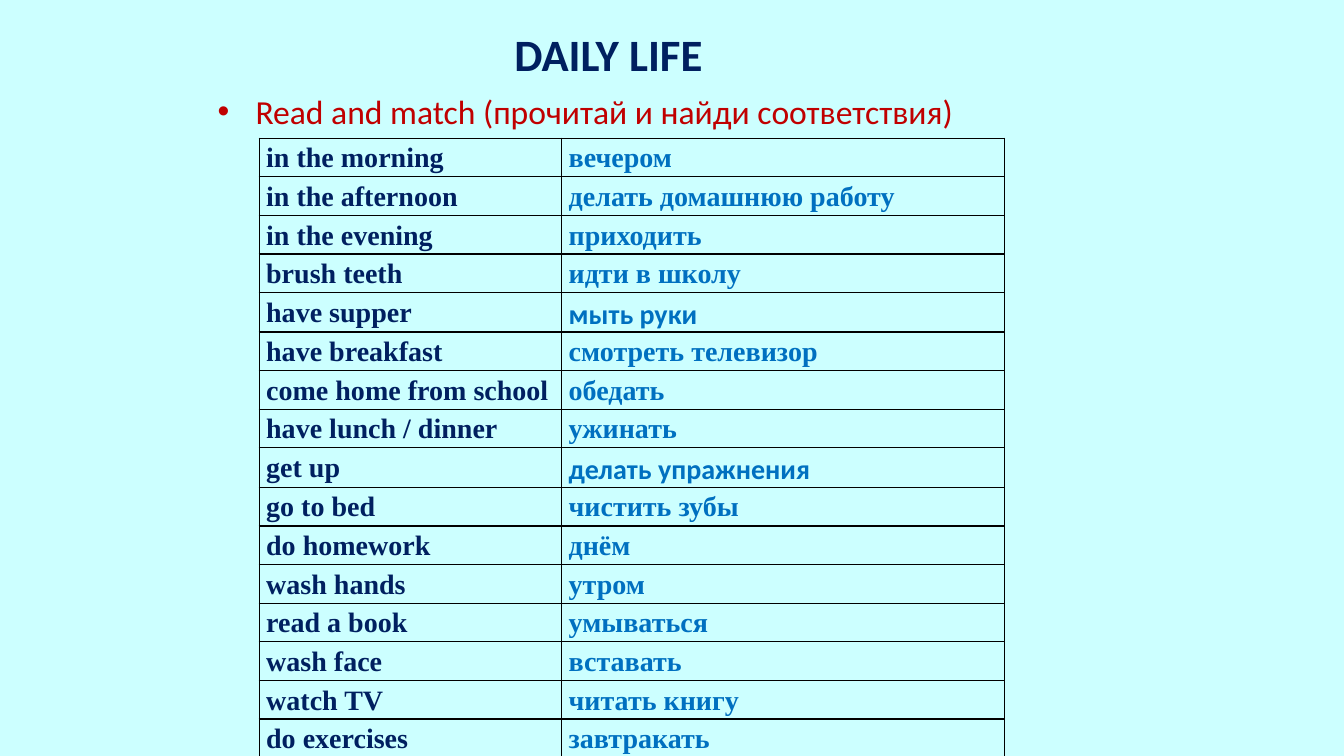
from lxml import etree
from pptx import Presentation
from pptx.dml.color import RGBColor
from pptx.enum.text import MSO_ANCHOR, PP_ALIGN
from pptx.oxml.ns import qn
from pptx.util import Inches, Pt

MIDDLE = MSO_ANCHOR.MIDDLE
TOP = MSO_ANCHOR.TOP
CENTER = PP_ALIGN.CENTER
LEFT = PP_ALIGN.LEFT

HUES = {
    "back": "CCFFFF",
    "navy": "002060",
    "blue": "0070C0",
    "red": "C00000",
    "line": "000000",
}
SANS, SERIF = "Calibri", "Times New Roman"
SIDES = ("lnL", "lnR", "lnT", "lnB")

PAIRS = [
    ("in the morning", "вечером"),
    ("in the afternoon", "делать домашнюю работу"),
    ("in the evening", "приходить"),
    ("brush teeth", "идти в школу"),
    ("have supper", "мыть руки"),
    ("have breakfast", "смотреть телевизор"),
    ("come home from school", "обедать"),
    ("have lunch / dinner", "ужинать"),
    ("get up", "делать упражнения"),
    ("go to bed", "чистить зубы"),
    ("do homework", "днём"),
    ("wash hands", "утром"),
    ("read a book", "умываться"),
    ("wash face", "вставать"),
    ("watch TV", "читать книгу"),
    ("do exercises", "завтракать"),
]
SANS_CELLS = {"мыть руки", "делать упражнения"}


class Page:
    """One slide, with lengths given in percent of its width and height."""

    def __init__(self, deck):
        self.wide, self.high = deck.slide_width, deck.slide_height
        self.slide = deck.slides.add_slide(deck.slide_layouts[1])
        fill = self.slide.background.fill
        fill.solid()
        fill.fore_color.rgb = RGBColor.from_string(HUES["back"])

    def box(self, left, top, width, height):
        return (
            round(self.wide * left / 100),
            round(self.high * top / 100),
            round(self.wide * width / 100),
            round(self.high * height / 100),
        )

    def run(self, para, text, size, hue, face=SANS, bold=False):
        run = para.add_run()
        run.text = text
        font = run.font
        font.size, font.name, font.bold = Pt(size), face, bold
        font.color.rgb = RGBColor.from_string(HUES[hue])

    def fill(self, index, area, text, size, hue, bold, align, anchor):
        """Move a template placeholder and write its text."""
        shape = self.slide.placeholders[index]
        shape.left, shape.top, shape.width, shape.height = self.box(*area)
        frame = shape.text_frame
        frame.word_wrap = True
        frame.vertical_anchor = anchor
        para = frame.paragraphs[0]
        para.alignment = align
        self.run(para, text, size, hue, bold=bold)

    def border(self, cell):
        props = cell._tc.get_or_add_tcPr()
        for spot, side in enumerate(SIDES):
            line = etree.Element(qn("a:" + side), w=str(Pt(1)))
            solid = etree.SubElement(line, qn("a:solidFill"))
            etree.SubElement(solid, qn("a:srgbClr"), val=HUES["line"])
            props.insert(spot, line)

    def cell(self, cell, text, hue):
        cell.margin_left = cell.margin_right = Inches(0.07)
        cell.margin_top = cell.margin_bottom = 0
        cell.fill.background()
        self.border(cell)
        para = cell.text_frame.paragraphs[0]
        para.line_spacing = 1.15
        face = SANS if text in SANS_CELLS else SERIF
        self.run(para, text, 20, hue, face, True)

    def table(self, area, shares, pairs):
        frame = self.slide.shapes.add_table(
            len(pairs), len(shares), *self.box(*area))
        table = frame.table
        table.first_row = table.horz_banding = False
        for col, share in zip(table.columns, shares):
            col.width = round(self.wide * share / 100)
        for row, pair in zip(table.rows, pairs):
            for cell, text, hue in zip(row.cells, pair, ("navy", "blue")):
                self.cell(cell, text, hue)


def main():
    deck = Presentation()
    deck.slide_width, deck.slide_height = Inches(13.33), Inches(7.5)
    page = Page(deck)
    page.fill(0, (20.48, 2.8, 49.59, 8.53), "DAILY LIFE",
              32, "navy", True, CENTER, MIDDLE)
    page.fill(1, (15.45, 11.33, 72.09, 84.93),
              "Read and match (прочитай и найди соответствия)",
              24, "red", False, LEFT, TOP)
    page.table((19.28, 18.27, 55.44, 81.73), (22.51, 32.93), PAIRS)
    deck.save("out.pptx")


if __name__ == "__main__":
    main()
